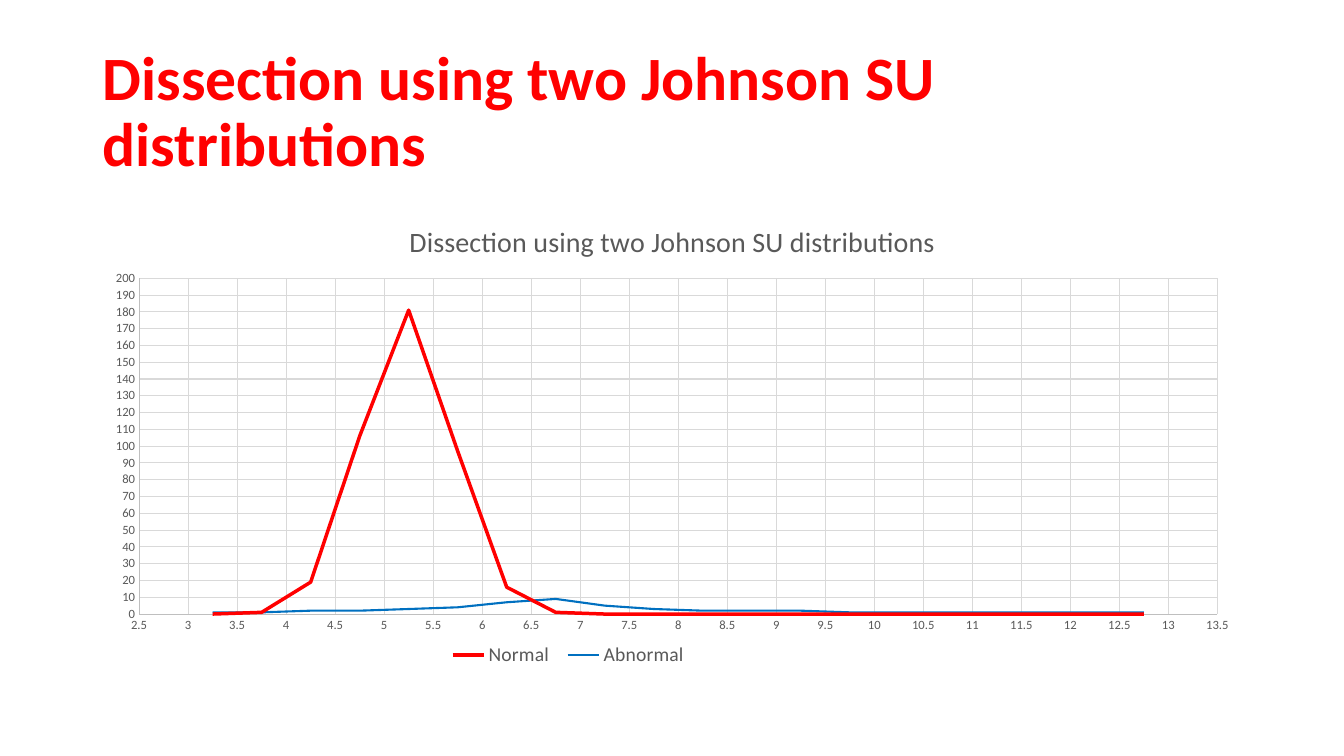
"""Build a slide with a titled scatter chart of two fitted distributions."""
from lxml.etree import SubElement as Sub, QName
from pptx import Presentation
from pptx.chart.data import XyChartData as Data
from pptx.dml.color import RGBColor as Rgb
from pptx.enum.chart import XL_CHART_TYPE as Kind
from pptx.enum.chart import XL_LEGEND_POSITION as Spot
from pptx.enum.chart import XL_TICK_MARK as Tick
from pptx.enum.text import MSO_ANCHOR as Anchor
from pptx.enum.text import PP_ALIGN as Align
from pptx.oxml.ns import qn
from pptx.util import Inches, Pt

HUES = {"red": "FF0000", "blue": "0070C0", "text": "595959",
        "grid": "D9D9D9", "axis": "BFBFBF"}
FONT = "Calibri"
HEAD = "Dissection using two Johnson SU distributions"
START, STEP = 3.25, 0.5
CURVES = [
    ("Normal", "red", 2.5,
     [0, 1, 19, 106, 181, 97, 16, 1] + [0] * 12),
    ("Abnormal", "blue", 1.5,
     [1, 1, 2, 2, 3, 4, 7, 9, 5, 3, 2, 2, 2] + [1] * 7),
]


def style(font, size, hue="text", bold=False):
    font.name, font.size, font.bold = FONT, Pt(size), bold
    font.color.rgb = Rgb.from_string(HUES[hue])


def write(frame, text, align=Align.LEFT, space=None, **look):
    frame.text = text
    para = frame.paragraphs[0]
    para.alignment, para.line_spacing = align, space
    style(para.runs[0].font, **look)


def stroke(line, hue, width):
    line.color.rgb = Rgb.from_string(HUES[hue])
    line.width = Pt(width)


def place(node, index, inner=False, **box):
    for old in node.findall(qn("c:layout")):
        node.remove(old)
    layout = node.makeelement(QName(qn("c:layout")))
    node.insert(index, layout)
    manual = Sub(layout, qn("c:manualLayout"))
    if inner:
        Sub(manual, qn("c:layoutTarget"), val="inner")
    for side in "xy":
        Sub(manual, qn(f"c:{side}Mode"), val="edge")
    for key in "xywh":
        Sub(manual, qn(f"c:{key}"), val=str(box[key]))


def scale(axis, low, high, unit, form):
    axis.minimum_scale, axis.maximum_scale = low, high
    axis.major_unit = unit
    axis.major_tick_mark = axis.minor_tick_mark = Tick.NONE
    axis.has_major_gridlines = True
    stroke(axis.major_gridlines.format.line, "grid", 0.75)
    stroke(axis.format.line, "axis", 0.75)
    labels = axis.tick_labels
    labels.number_format, labels.number_format_is_linked = form, False
    style(labels.font, 9)


def plot(slide):
    data = Data()
    for name, _, _, vals in CURVES:
        points = data.add_series(name)
        for i, val in enumerate(vals):
            points.add_data_point(START + i * STEP, val)
    chart = slide.shapes.add_chart(
        Kind.XY_SCATTER_SMOOTH_NO_MARKERS, Inches(0.92), Inches(2),
        Inches(11.5), Inches(4.76), data).chart
    chart.font.name, chart.font.size = FONT, Pt(10)
    chart.plots[0].vary_by_categories = False
    for series, (_, hue, width, _) in zip(chart.plots[0].series, CURVES):
        series.smooth = True
        stroke(series.format.line, hue, width)
    scale(chart.category_axis, 2.5, 13.5, 0.5, "General")
    scale(chart.value_axis, 0, 200, 10, "0")
    chart.has_title = True
    write(chart.chart_title.text_frame, HEAD, align=Align.CENTER, size=20)
    chart.has_legend = True
    legend = chart.legend
    legend.position, legend.include_in_layout = Spot.BOTTOM, False
    style(legend.font, 14)
    place(legend._element, 1, x=0.3, y=0.9, w=0.22, h=0.09)
    area = chart._chartSpace.chart.plotArea
    place(area, 0, inner=True, x=0.04, y=0.16, w=0.93, h=0.7)


def main():
    deck = Presentation()
    deck.slide_width, deck.slide_height = Inches(13.33), Inches(7.5)
    slide = deck.slides.add_slide(deck.slide_layouts[5])
    title = slide.shapes.title
    title.left, title.top = Inches(0.92), Inches(0.4)
    title.width, title.height = Inches(11.5), Inches(1.45)
    title.text_frame.vertical_anchor = Anchor.MIDDLE
    write(title.text_frame, HEAD, space=0.9, size=44, hue="red", bold=True)
    plot(slide)
    deck.save("out.pptx")


if __name__ == "__main__":
    main()
